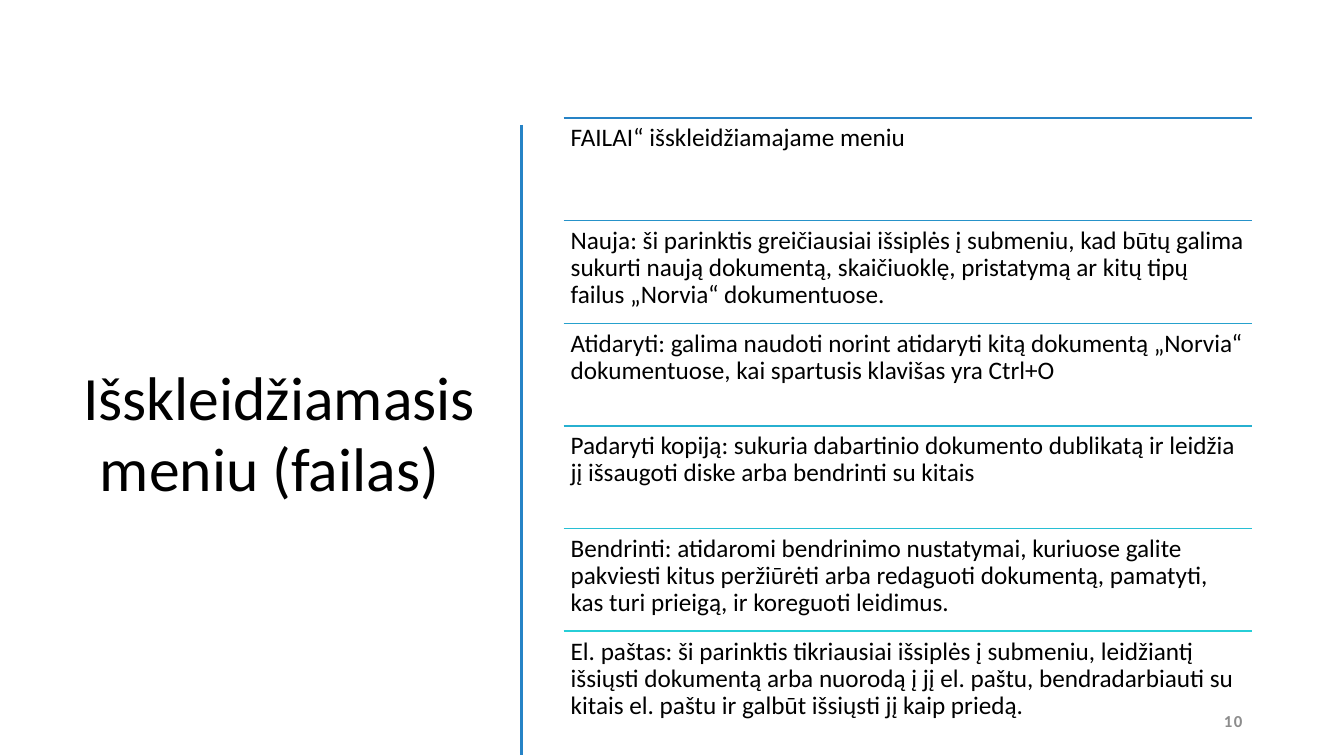
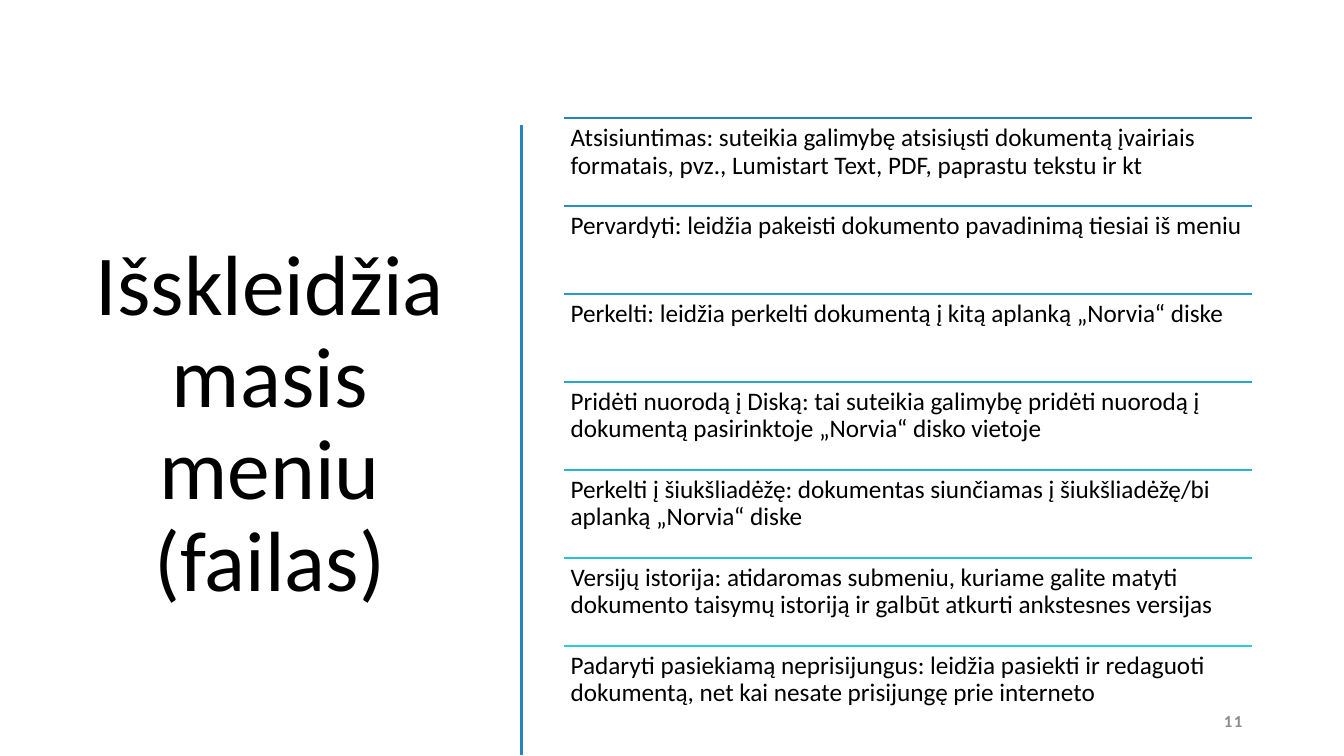
from lxml.etree import SubElement
from pptx import Presentation
from pptx.dml.color import RGBColor
from pptx.enum.shapes import MSO_CONNECTOR
from pptx.enum.text import MSO_ANCHOR, MSO_AUTO_SIZE, PP_ALIGN
from pptx.oxml.ns import qn
from pptx.util import Inches, Pt

# Shared style
FONT = "Calibri"
BLACK = RGBColor(0x00, 0x00, 0x00)
GRAY = RGBColor(0x8C, 0x8C, 0x8C)
BLUE = RGBColor(0x26, 0x83, 0xC6)
TEAL = RGBColor(0x27, 0xCE, 0xD7)
LIST_LEFT, LIST_TOP, LIST_WIDTH, LIST_HEIGHT = 5.59, 1.17, 6.83, 6.11
DIVIDER_X = 5.17
TITLE_SIZE = 61

# Each slide: number, title runs as (text, size), list rows
SLIDES = [
    (10, [(" ", TITLE_SIZE), ("Išskleidžiamasis meniu (failas)", 44)], [
        "FAILAI“ išskleidžiamajame meniu",
        "Nauja: ši parinktis greičiausiai išsiplės į submeniu, kad būtų galima sukurti naują "
        "dokumentą, skaičiuoklę, pristatymą ar kitų tipų failus „Norvia“ dokumentuose.",
        "Atidaryti: galima naudoti norint atidaryti kitą dokumentą „Norvia“ dokumentuose, "
        "kai spartusis klavišas yra Ctrl+O",
        "Padaryti kopiją: sukuria dabartinio dokumento dublikatą ir leidžia jį išsaugoti "
        "diske arba bendrinti su kitais",
        "Bendrinti: atidaromi bendrinimo nustatymai, kuriuose galite pakviesti kitus peržiūrėti "
        "arba redaguoti dokumentą, pamatyti, kas turi prieigą, ir koreguoti leidimus.",
        "El. paštas: ši parinktis tikriausiai išsiplės į submeniu, leidžiantį išsiųsti dokumentą "
        "arba nuorodą į jį el. paštu, bendradarbiauti su kitais el. paštu ir galbūt išsiųsti "
        "jį kaip priedą.",
    ]),
    (11, [("Išskleidžiamasis meniu (failas)", TITLE_SIZE)], [
        "Atsisiuntimas: suteikia galimybę atsisiųsti dokumentą įvairiais formatais, pvz., "
        "Lumistart Text, PDF, paprastu tekstu ir kt",
        "Pervardyti: leidžia pakeisti dokumento pavadinimą tiesiai iš meniu",
        "Perkelti: leidžia perkelti dokumentą į kitą aplanką „Norvia“ diske",
        "Pridėti nuorodą į Diską: tai suteikia galimybę pridėti nuorodą į dokumentą "
        "pasirinktoje „Norvia“ disko vietoje",
        "Perkelti į šiukšliadėžę: dokumentas siunčiamas į šiukšliadėžę/bi aplanką „Norvia“ diske",
        "Versijų istorija: atidaromas submeniu, kuriame galite matyti dokumento taisymų "
        "istoriją ir galbūt atkurti ankstesnes versijas",
        "Padaryti pasiekiamą neprisijungus: leidžia pasiekti ir redaguoti dokumentą, net kai "
        "nesate prisijungę prie interneto",
    ]),
]


def add_line(slide, start, end, color, width):
    line = slide.shapes.add_connector(
        MSO_CONNECTOR.STRAIGHT, *[Inches(value) for value in start + end])
    line.line.color.rgb = color
    line.line.width = Pt(width)
    SubElement(line._element.spPr, qn("a:effectLst"))


def add_text(slide, box, text, size, color):
    shape = slide.shapes.add_textbox(*[Inches(value) for value in box])
    frame = shape.text_frame
    frame.word_wrap = True
    frame.text = text
    font = frame.paragraphs[0].runs[0].font
    font.name, font.size, font.color.rgb = FONT, Pt(size), color
    return frame


presentation = Presentation()
presentation.slide_width = Inches(13.33)
presentation.slide_height = Inches(7.5)
title_only = presentation.slide_layouts[5]

for number, title_runs, rows in SLIDES:
    slide = presentation.slides.add_slide(title_only)

    # Title
    title = slide.shapes.title
    title.left, title.top = Inches(0.52), Inches(LIST_TOP)
    title.width, title.height = Inches(4.31), Inches(LIST_HEIGHT)
    frame = title.text_frame
    frame.word_wrap = True
    frame.auto_size = MSO_AUTO_SIZE.NONE
    frame.vertical_anchor = MSO_ANCHOR.MIDDLE
    paragraph = frame.paragraphs[0]
    paragraph.alignment = PP_ALIGN.CENTER
    paragraph.line_spacing = 0.9
    for text, size in title_runs:
        run = paragraph.add_run()
        run.text = text
        run.font.name, run.font.size, run.font.color.rgb = FONT, Pt(size), BLACK

    # Vertical divider
    add_line(slide, (DIVIDER_X, 1.24), (DIVIDER_X, 7.49), BLUE, 2)

    # Rows of equal height, with rules shading from blue to teal
    row_height = LIST_HEIGHT / len(rows)
    for index, text in enumerate(rows):
        top = LIST_TOP + index * row_height
        share = index / (len(rows) - 1)
        color = RGBColor(*[round(a + (b - a) * share) for a, b in zip(BLUE, TEAL)])
        add_line(slide, (LIST_LEFT, top), (LIST_LEFT + LIST_WIDTH, top), color, 1)
        frame = add_text(slide, (LIST_LEFT, top, LIST_WIDTH, row_height), text, 18, BLACK)
        frame.margin_left = frame.margin_right = Inches(0.07)
        frame.margin_top = frame.margin_bottom = Inches(0.07)
        frame.paragraphs[0].line_spacing = 0.9

    # Slide number
    frame = add_text(slide, (9.42, 6.95, 3, 0.4), str(number), 12, GRAY)
    frame.vertical_anchor = MSO_ANCHOR.MIDDLE
    paragraph = frame.paragraphs[0]
    paragraph.alignment = PP_ALIGN.RIGHT
    run = paragraph.runs[0]
    run.font.bold = True
    run._r.get_or_add_rPr().set("spc", "100")

presentation.save("out.pptx")
